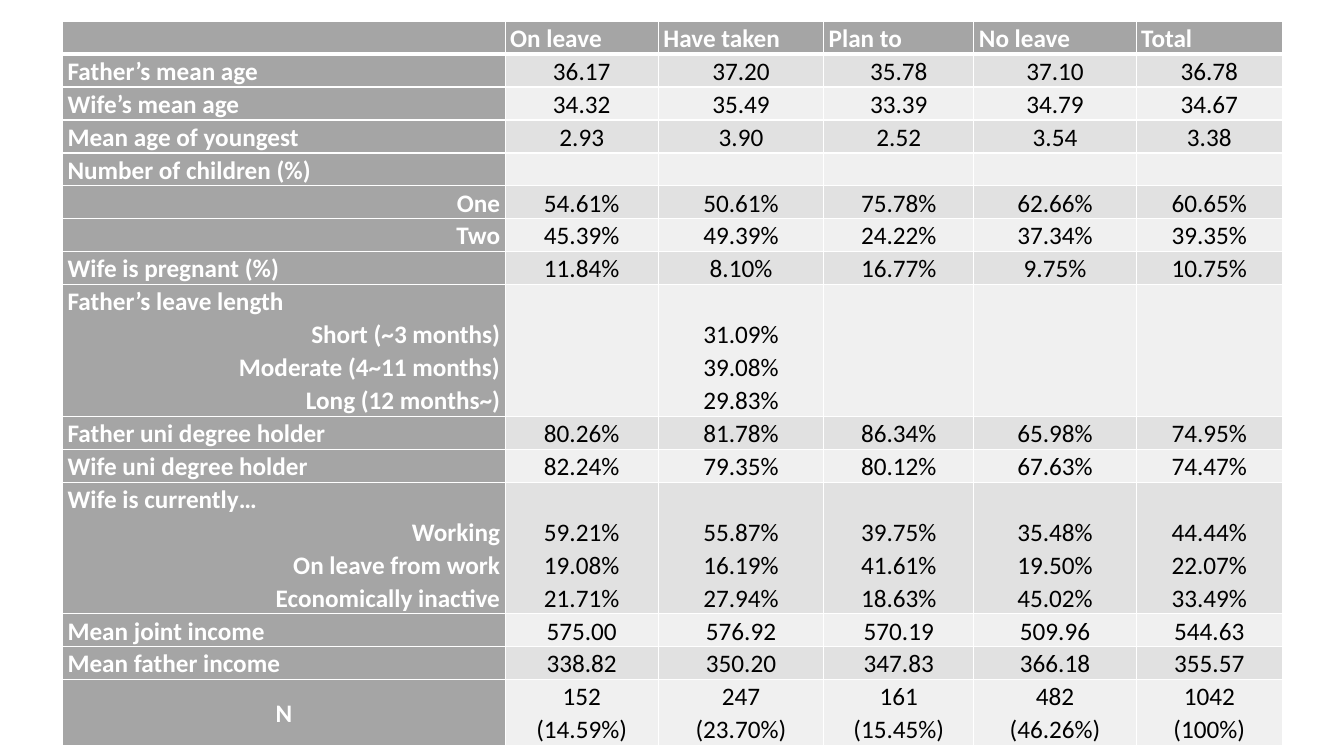
from dataclasses import dataclass

from lxml.etree import SubElement
from pptx import Presentation
from pptx.dml.color import RGBColor
from pptx.enum.text import MSO_ANCHOR, PP_ALIGN
from pptx.oxml.ns import qn
from pptx.util import Inches, Pt


@dataclass(frozen=True)
class Theme:
    font: str = "Calibri"
    size: int = 18
    spacing: float = 1.07
    label_fill: str = "A5A5A5"
    bands: tuple = ("F0F0F0", "E1E1E1")
    label_text: str = "FFFFFF"
    value_text: str = "000000"
    border: str = "FFFFFF"
    thin: int = 1
    thick: int = 3


THEME = Theme()
LEFT, CENTER, RIGHT = PP_ALIGN.LEFT, PP_ALIGN.CENTER, PP_ALIGN.RIGHT

COL_WIDTHS = [4.39, 1.52, 1.64, 1.49, 1.61, 1.45]
# Minimum row height by number of text lines
ROW_HEIGHTS = {1: 0.24, 2: 0.49, 4: 0.99}
HEADERS = ["", "On leave", "Have taken", "Plan to", "No leave", "Total"]

# Each row: label lines, alignment of its first line, values by column
ROWS = [
    ("Father’s mean age", LEFT, ["36.17", "37.20", "35.78", "37.10", "36.78"]),
    ("Wife’s mean age", LEFT, ["34.32", "35.49", "33.39", "34.79", "34.67"]),
    ("Mean age of youngest", LEFT, ["2.93", "3.90", "2.52", "3.54", "3.38"]),
    ("Number of children (%)", LEFT, [""] * 5),
    ("One", RIGHT, ["54.61%", "50.61%", "75.78%", "62.66%", "60.65%"]),
    ("Two", RIGHT, ["45.39%", "49.39%", "24.22%", "37.34%", "39.35%"]),
    ("Wife is pregnant (%)", LEFT, ["11.84%", "8.10%", "16.77%", "9.75%", "10.75%"]),
    ("Father’s leave length\nShort (~3 months)\nModerate (4~11 months)\nLong (12 months~)",
     LEFT, ["", "31.09%\n39.08%\n29.83%", "", "", ""]),
    ("Father uni degree holder", LEFT, ["80.26%", "81.78%", "86.34%", "65.98%", "74.95%"]),
    ("Wife uni degree holder", LEFT, ["82.24%", "79.35%", "80.12%", "67.63%", "74.47%"]),
    ("Wife is currently…\nWorking\nOn leave from work\nEconomically inactive", LEFT,
     ["59.21%\n19.08%\n21.71%", "55.87%\n16.19%\n27.94%", "39.75%\n41.61%\n18.63%",
      "35.48%\n19.50%\n45.02%", "44.44%\n22.07%\n33.49%"]),
    ("Mean joint income", LEFT, ["575.00", "576.92", "570.19", "509.96", "544.63"]),
    ("Mean father income", LEFT, ["338.82", "350.20", "347.83", "366.18", "355.57"]),
    ("N", CENTER, ["152\n(14.59%)", "247\n(23.70%)", "161\n(15.45%)",
                   "482\n(46.26%)", "1042\n(100%)"]),
]


def set_borders(cell, top, bottom):
    tc_pr = cell._tc.get_or_add_tcPr()
    widths = {"a:lnL": THEME.thin, "a:lnR": THEME.thin, "a:lnT": top, "a:lnB": bottom}
    for tag, width in widths.items():
        ln = SubElement(tc_pr, qn(tag), w=str(Pt(width)))
        SubElement(SubElement(ln, qn("a:solidFill")), qn("a:srgbClr"), val=THEME.border)


def style_cell(cell, fill, top=THEME.thin, bottom=THEME.thin, anchor=MSO_ANCHOR.MIDDLE):
    cell.margin_left = cell.margin_right = Inches(0.05)
    cell.margin_top = cell.margin_bottom = 0
    cell.vertical_anchor = anchor
    set_borders(cell, top, bottom)
    cell.fill.solid()
    cell.fill.fore_color.rgb = RGBColor.from_string(fill)


def write_lines(cell, text, color, bold, first_align, rest_align):
    tf = cell.text_frame
    for i, line in enumerate(text.split("\n")):
        p = tf.add_paragraph() if i else tf.paragraphs[0]
        p.alignment = rest_align if i else first_align
        p.line_spacing = THEME.spacing
        if line:
            r = p.add_run()
            r.text = line
            r.font.name = THEME.font
            r.font.size = Pt(THEME.size)
            r.font.bold = bold
            r.font.color.rgb = RGBColor.from_string(color)


def add_header(table):
    for col, text in enumerate(HEADERS):
        cell = table.cell(0, col)
        style_cell(cell, THEME.label_fill, bottom=THEME.thick)
        write_lines(cell, text, THEME.label_text, True, LEFT, LEFT)


def add_body_row(table, row, label, align, values):
    top = THEME.thick if row == 1 else THEME.thin
    cell = table.cell(row, 0)
    style_cell(cell, THEME.label_fill, top)
    write_lines(cell, label, THEME.label_text, True, align, RIGHT)

    # Values of a grouped row line up with the sub-labels at its bottom
    anchor = MSO_ANCHOR.BOTTOM if "\n" in label else MSO_ANCHOR.MIDDLE
    for col, text in enumerate(values, 1):
        cell = table.cell(row, col)
        style_cell(cell, THEME.bands[row % 2], top, anchor=anchor)
        write_lines(cell, text, THEME.value_text, False, CENTER, CENTER)


def add_leave_table(s, left, top, width, height):
    table = s.shapes.add_table(len(ROWS) + 1, len(HEADERS), Inches(left), Inches(top),
                               Inches(width), Inches(height)).table
    table.first_row = table.horz_banding = False
    for column, share in zip(table.columns, COL_WIDTHS):
        column.width = Inches(width * share / sum(COL_WIDTHS))
    table.rows[0].height = Inches(ROW_HEIGHTS[1])
    add_header(table)
    for row, (label, align, values) in enumerate(ROWS, 1):
        lines = max(text.count("\n") + 1 for text in [label, *values])
        table.rows[row].height = Inches(ROW_HEIGHTS[lines])
        add_body_row(table, row, label, align, values)


def main():
    prs = Presentation()
    prs.slide_width, prs.slide_height = Inches(13.33), Inches(7.5)
    s = prs.slides.add_slide(prs.slide_layouts[6])
    add_leave_table(s, 0.62, 0.21, 12.1, 6.85)
    prs.save("out.pptx")


if __name__ == "__main__":
    main()
